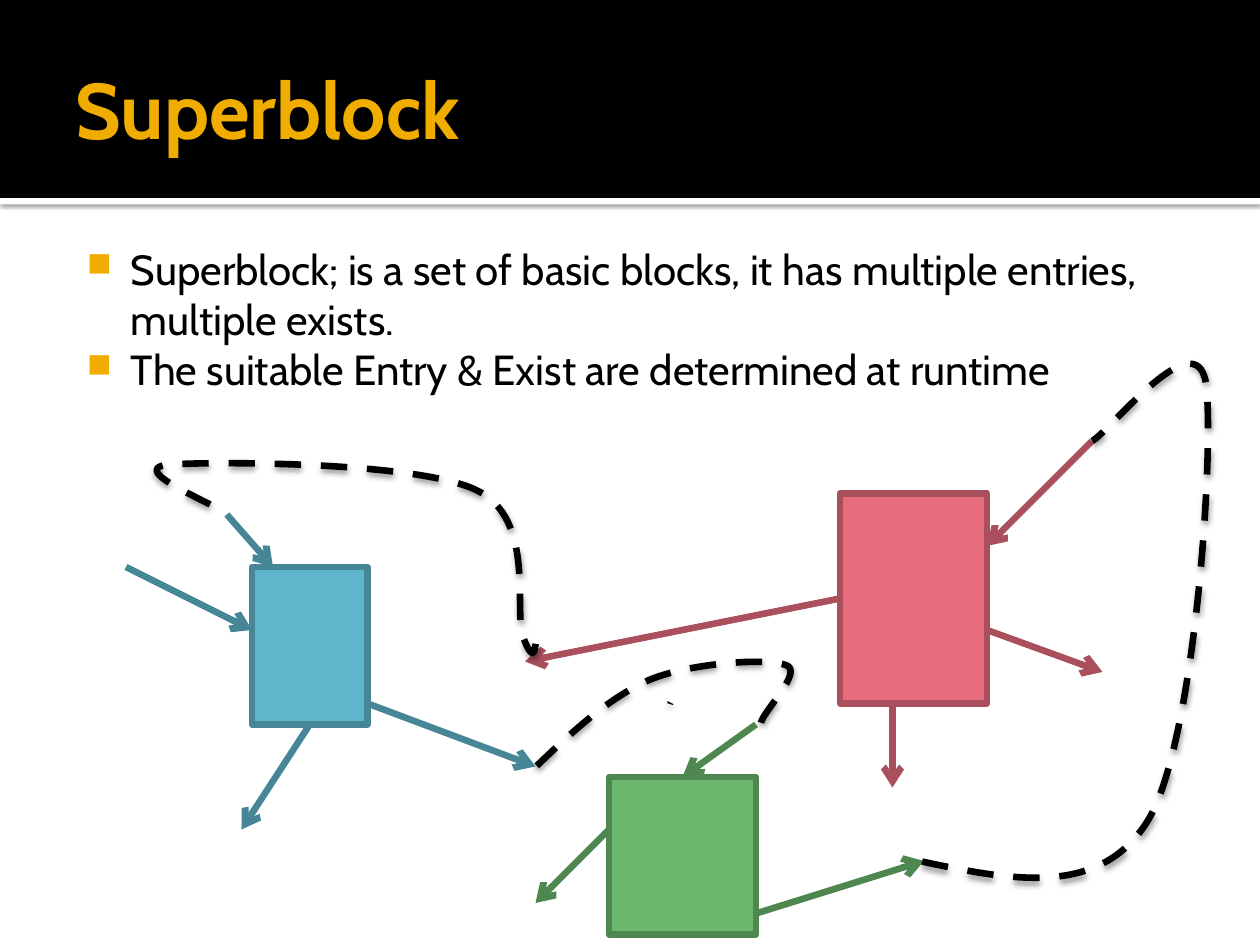
from dataclasses import dataclass

from lxml import etree
from pptx import Presentation
from pptx.dml.color import RGBColor
from pptx.enum import dml, shapes, text
from pptx.oxml import ns
from pptx.util import Cm, Pt


@dataclass(frozen=True)
class Theme:
    font: str = "Cabin"
    black: str = "000000"
    white: str = "FFFFFF"
    gold: str = "F0AD00"
    blue: tuple = ("60B5CC", "478697")
    red: tuple = ("E66C7D", "AA505C")
    green: tuple = ("6BB76D", "4F8751")
    title: int = 45
    body: int = 24
    mark: int = 18
    line: float = 3.78


THEME = Theme()

BULLETS = (
    "Superblock; is a set of basic blocks, it has multiple entries, multiple exists.",
    "The suitable Entry & Exist are determined at runtime",
)

# Per block: colours, box (left, top, width, height), arrows (from, to), in grid units
BLOCKS = (
    (THEME.blue, (24, 54, 11, 15), (
        (21.6, 49, 26, 54), (12, 54, 24, 60), (35, 67, 51, 73), (29.5, 69, 23, 79))),
    (THEME.red, (80, 47, 14, 20), (
        (104, 42, 94, 52), (94, 60, 105, 64), (80, 57, 50, 63), (85, 67, 85, 75))),
    (THEME.green, (58, 74, 14, 15), (
        (72, 69, 65, 74), (72, 87, 88, 82), (58, 79, 51, 86))),
)

# Start point, then three points per Bézier segment, in centimetres
BLUE_TO_GREEN = (
    (10.82, 15.44), (11.56, 14.73), (12.29, 14.05), (13.13, 13.69), (13.97, 13.36),
    (15.47, 13.26), (15.85, 13.41), (16.21, 13.54), (15.37, 14.35), (15.34, 14.58))
RED_TO_BLUE = (
    (10.8, 12.98), (10.77, 13.16), (10.74, 13.34), (10.54, 12.83), (10.36, 12.29),
    (10.8, 10.44), (9.6, 9.88), (8.41, 9.3), (4.22, 9.3), (3.38, 9.37),
    (2.54, 9.47), (4.34, 10.16), (4.57, 10.36))
GREEN_TO_RED = (
    (18.59, 17.37), (20.4, 17.75), (22.2, 18.11), (23.16, 16.51), (24.1, 14.91),
    (24.49, 8.99), (24.31, 7.72), (24.1, 6.45), (22.38, 8.69), (22.02, 8.89))


def grid(*values):
    """Convert grid units, twelve to the inch, to lengths."""
    return [Cm(v * 2.54 / 12) for v in values]


def add_xml(parent, tag, **attrs):
    return etree.SubElement(parent, ns.qn(tag), {k: str(v) for k, v in attrs.items()})


def set_fill(sp, color):
    sp.fill.solid()
    sp.fill.fore_color.rgb = RGBColor.from_string(color)


def set_line(sp, color):
    sp.line.color.rgb = RGBColor.from_string(color)
    sp.line.width = Pt(THEME.line)


def set_font(p, size, color, bold=False):
    p.font.name = THEME.font
    p.font.size = Pt(size)
    p.font.bold = bold
    p.font.color.rgb = RGBColor.from_string(color)


def set_insets(tf, left, top, right, bottom):
    tf.margin_left, tf.margin_top = Cm(left), Cm(top)
    tf.margin_right, tf.margin_bottom = Cm(right), Cm(bottom)


def add_shadow(sp, alpha, blur, distance):
    """Give the shape a black shadow that falls straight down."""
    sp.shadow.inherit = False
    effects = sp._element.spPr.find(ns.qn("a:effectLst"))
    shadow = add_xml(effects, "a:outerShdw", blurRad=Pt(blur), dist=Pt(distance),
                     dir=90 * 60000, algn="ctr", rotWithShape=0)
    color = add_xml(shadow, "a:srgbClr", val=THEME.black)
    add_xml(color, "a:alpha", val=alpha * 1000)


def add_rectangle(s, box, fill, line=None):
    sp = s.shapes.add_shape(shapes.MSO_SHAPE.RECTANGLE, *box)
    sp.shadow.inherit = False
    set_fill(sp, fill)
    if line:
        set_line(sp, line)
    else:
        sp.line.fill.background()
    return sp


def add_header(s):
    title = s.shapes.title
    rule = add_rectangle(s, (0, Cm(3.99), Cm(25.4), Cm(0.13)), THEME.white)
    add_shadow(rule, 60, 2.5, 0.8)
    band = add_rectangle(s, (0, 0, Cm(25.4), Cm(3.99)), THEME.black)
    for sp in (rule, band):
        title._element.addprevious(sp._element)

    title.left, title.top, title.width, title.height = Cm(1.27), Cm(0.43), Cm(22.86), Cm(3.48)
    tf = title.text_frame
    tf.text = "Superblock"
    tf.auto_size = text.MSO_AUTO_SIZE.NONE
    tf.vertical_anchor = text.MSO_ANCHOR.MIDDLE
    set_insets(tf, 0.25, 0.13, 0.13, 0.13)
    p = tf.paragraphs[0]
    p.alignment = text.PP_ALIGN.LEFT
    set_font(p, THEME.title, THEME.gold, bold=True)


def add_bullets(s, lines):
    tf = s.shapes.add_textbox(Cm(1.27), Cm(4.65), Cm(22.86), Cm(12.85)).text_frame
    tf.word_wrap = True
    set_insets(tf, 0.15, 0.25, 0.25, 0.13)
    tf.text = "\n".join(lines)
    for p in tf.paragraphs:
        pPr = p._p.get_or_add_pPr()
        pPr.set("marL", str(Cm(1.22)))
        pPr.set("indent", str(Cm(-0.89)))
        add_xml(add_xml(pPr, "a:buClr"), "a:srgbClr", val=THEME.gold)
        add_xml(pPr, "a:buSzPct", val=80000)
        add_xml(pPr, "a:buChar", char="■")
        set_font(p, THEME.body, THEME.black)


def add_arrow(s, ends, color):
    arrow = s.shapes.add_connector(shapes.MSO_CONNECTOR.STRAIGHT, *ends)
    set_line(arrow, color)
    add_xml(arrow.line._get_or_add_ln(), "a:tailEnd", type="arrow")
    add_xml(arrow._element.spPr, "a:effectLst")


def add_block(s, colors, box, arrows):
    fill, line = colors
    add_rectangle(s, grid(*box), fill, line)
    for ends in arrows:
        add_arrow(s, grid(*ends), line)


def add_dashed_curve(s, points):
    """Draw a freeform through the points, every three forming a Bézier segment."""
    start, *rest = [(Cm(x), Cm(y)) for x, y in points]
    builder = s.shapes.build_freeform(*start)
    builder.add_line_segments(rest, close=False)
    sp = builder.convert_to_shape()
    steps = list(sp._element.iter(ns.qn("a:lnTo")))
    outline = steps[0].getparent()
    for i in range(0, len(steps), 3):
        curve = add_xml(outline, "a:cubicBezTo")
        for step in steps[i:i + 3]:
            curve.append(step[0])
            outline.remove(step)
    sp.fill.background()
    set_line(sp, THEME.black)
    sp.line.dash_style = dml.MSO_LINE.DASH
    add_shadow(sp, 38, 3.5, 2)
    return sp


def main():
    prs = Presentation()
    prs.slide_width, prs.slide_height = Cm(25.4), Cm(19.05)
    s = prs.slides.add_slide(prs.slide_layouts.get_by_name("Title Only"))
    add_header(s)
    add_bullets(s, BULLETS)
    for block in BLOCKS:
        add_block(s, *block)

    marked = add_dashed_curve(s, BLUE_TO_GREEN)
    tf = marked.text_frame
    tf.text = "`"
    tf.vertical_anchor = text.MSO_ANCHOR.MIDDLE
    p = tf.paragraphs[0]
    p.alignment = text.PP_ALIGN.CENTER
    set_font(p, THEME.mark, THEME.black)

    for points in (RED_TO_BLUE, GREEN_TO_RED):
        add_dashed_curve(s, points)
    prs.save("out.pptx")


if __name__ == "__main__":
    main()
